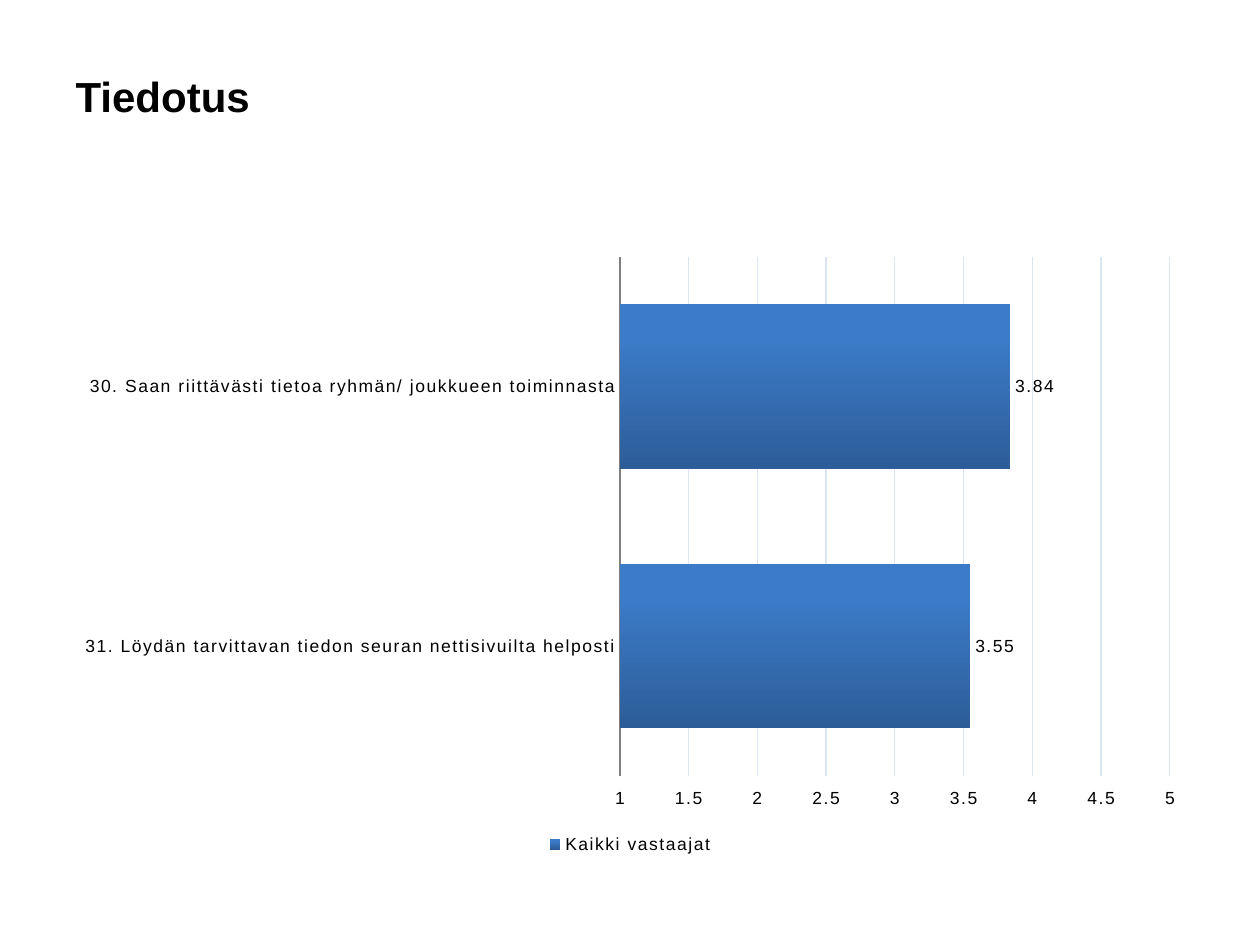
from lxml import etree
from pptx import Presentation
from pptx.chart.data import CategoryChartData
from pptx.dml.color import RGBColor
from pptx.enum.chart import (XL_CHART_TYPE, XL_LABEL_POSITION, XL_LEGEND_POSITION,
                             XL_TICK_LABEL_POSITION, XL_TICK_MARK)
from pptx.enum.text import MSO_ANCHOR, PP_ALIGN
from pptx.oxml import parse_xml
from pptx.util import Inches, Pt

BAR_CHART = XL_CHART_TYPE.BAR_CLUSTERED
NO_TICK = XL_TICK_MARK.NONE
FAR_SIDE = XL_TICK_LABEL_POSITION.HIGH
LABEL_OUTSIDE = XL_LABEL_POSITION.OUTSIDE_END
LEGEND_BOTTOM = XL_LEGEND_POSITION.BOTTOM
MIDDLE = MSO_ANCHOR.MIDDLE
LEFT = PP_ALIGN.LEFT

BLACK = RGBColor(0x00, 0x00, 0x00)
AXIS_GRAY = RGBColor(0x80, 0x80, 0x80)
GRID_BLUE = RGBColor(0xDC, 0xE6, 0xF2)
BAR_LIGHT = RGBColor(0x3C, 0x7B, 0xC8)
BAR_DARK = RGBColor(0x2C, 0x5D, 0x98)
CHART_NS = "http://schemas.openxmlformats.org/drawingml/2006/chart"

prs = Presentation()
prs.slide_width, prs.slide_height = Inches(10), Inches(7.5)
slide = prs.slides.add_slide(prs.slide_layouts[5])

# Title
title = slide.shapes.title
title.left, title.top = Inches(0.5), Inches(0.36)
title.width, title.height = Inches(9), Inches(0.8)
title.text_frame.vertical_anchor = MIDDLE
heading = title.text_frame.paragraphs[0]
heading.alignment = LEFT
run = heading.add_run()
run.text = "Tiedotus"
run.font.name, run.font.size, run.font.bold = "Arial", Pt(24), True
run.font.color.rgb = BLACK

# Survey averages
averages = CategoryChartData()
averages.categories = [
    "30. Saan riittävästi tietoa ryhmän/ joukkueen toiminnasta",
    "31. Löydän tarvittavan tiedon seuran nettisivuilta helposti",
]
averages.add_series("Kaikki vastaajat", (3.84, 3.55))
chart = slide.shapes.add_chart(BAR_CHART, Inches(0.5), Inches(1.94),
                               Inches(9), Inches(4.88), averages).chart
chart.has_title = False
chart.font.name = "Calibri"
chart.has_legend = True
chart.legend.position = LEGEND_BOTTOM
chart.legend.include_in_layout = False

questions = chart.category_axis
questions.reverse_order = True
questions.format.line.color.rgb = AXIS_GRAY
questions.format.line.width = Pt(1)

scale = chart.value_axis
scale.minimum_scale, scale.maximum_scale, scale.major_unit = 1, 5, 0.5
scale.format.line.fill.background()
scale.tick_label_position = FAR_SIDE
scale.tick_labels.number_format = "General"
scale.tick_labels.number_format_is_linked = False
scale.major_gridlines.format.line.color.rgb = GRID_BLUE
scale.major_gridlines.format.line.width = Pt(0.75)
for axis in (questions, scale):
    axis.major_tick_mark = axis.minor_tick_mark = NO_TICK

plot = chart.plots[0]
plot.gap_width = 58
plot.vary_by_categories = False
respondents = plot.series[0]
respondents.invert_if_negative = False
bar_fill = respondents.format.fill
bar_fill.gradient()
bar_fill.gradient_angle = 90
for stop, color, position in zip(bar_fill.gradient_stops,
                                 (BAR_DARK, BAR_LIGHT), (0, 0.8)):
    stop.color.rgb = color
    stop.position = position

labels = respondents.data_labels
labels.show_value = True
labels.position = LABEL_OUTSIDE

for font in (chart.font, questions.tick_labels.font, scale.tick_labels.font,
             chart.legend.font, labels.font):
    font.size = Pt(10)
    font.color.rgb = BLACK
    if font is not chart.font:
        font.name = "Arial"

# Letter spacing of one point, and a fixed inner plot area
chart_xml = chart._chartSpace
for properties in chart_xml.xpath(".//a:defRPr"):
    properties.set("spc", "100")

plot_area = chart_xml.xpath(".//c:plotArea")[0]
for automatic in plot_area.xpath("./c:layout"):
    plot_area.remove(automatic)
layout = parse_xml(f'<c:layout xmlns:c="{CHART_NS}"><c:manualLayout/></c:layout>')
for tag, value in (("layoutTarget", "inner"), ("xMode", "edge"), ("yMode", "edge"),
                   ("x", "0.491"), ("y", "0.02"), ("w", "0.485"), ("h", "0.845")):
    etree.SubElement(layout[0], f"{{{CHART_NS}}}{tag}").set("val", value)
plot_area.insert(0, layout)

prs.save("out.pptx")
